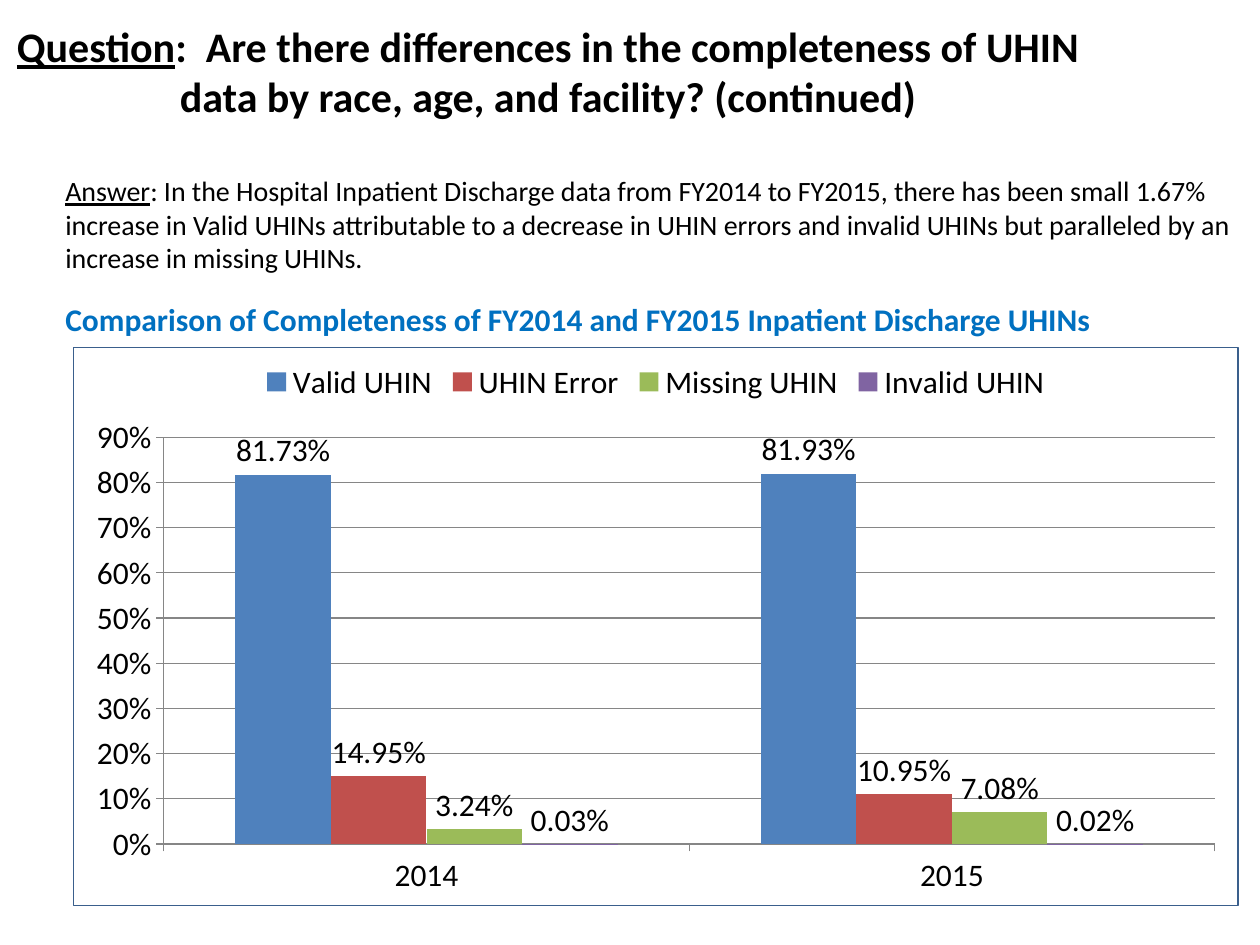
from lxml.etree import fromstring
from pptx import Presentation
from pptx.chart.data import CategoryChartData
from pptx.dml.color import RGBColor
from pptx.enum.chart import XL_CHART_TYPE, XL_LABEL_POSITION, XL_LEGEND_POSITION, XL_TICK_MARK
from pptx.enum.text import MSO_ANCHOR, PP_ALIGN
from pptx.oxml.ns import nsdecls
from pptx.util import Inches, Pt

WIDTH, HEIGHT = 10, 7.5
FONT = "Calibri"
COLORS = {
    "text": "000000", "heading": "0070C0", "grid": "868686", "border": "3A5F8C",
    "Valid UHIN": "4F81BD", "UHIN Error": "C0504D",
    "Missing UHIN": "9BBB59", "Invalid UHIN": "8064A2",
}
YEARS = ["2014", "2015"]
COMPLETENESS = {
    "Valid UHIN": (0.8173, 0.8193),
    "UHIN Error": (0.1495, 0.1095),
    "Missing UHIN": (0.0324, 0.0708),
    "Invalid UHIN": (0.0003, 0.0002),
}


def share(left, top, width, height):
    return (Inches(left * WIDTH), Inches(top * HEIGHT),
            Inches(width * WIDTH), Inches(height * HEIGHT))


def color(key):
    return RGBColor.from_string(COLORS[key])


def add_text(slide, box, text, lead="", size=18, bold=False, ink="text",
             align=PP_ALIGN.LEFT, anchor=MSO_ANCHOR.TOP, wrap=True):
    frame = slide.shapes.add_textbox(*box).text_frame
    frame.word_wrap = wrap
    frame.vertical_anchor = anchor
    paragraph = frame.paragraphs[0]
    paragraph.alignment = align
    for words, underlined in ((lead, True), (text, False)):
        if words:
            run = paragraph.add_run()
            run.text = words
            run.font.name = FONT
            run.font.size = Pt(size)
            run.font.bold = bold
            run.font.underline = underlined
            run.font.color.rgb = color(ink)


def add_question(slide, box):
    add_text(slide, box,
             ":  Are there differences in the completeness of UHIN data by race, "
             "age, and facility? (continued)",
             lead="Question", size=24, bold=True,
             align=PP_ALIGN.CENTER, anchor=MSO_ANCHOR.MIDDLE)


def add_answer(slide, box):
    add_text(slide, box,
             ": In the Hospital Inpatient Discharge data from FY2014 to FY2015, there has "
             "been small 1.67% increase in Valid UHINs attributable to a decrease in UHIN "
             "errors and invalid UHINs but paralleled by an increase in missing UHINs.",
             lead="Answer", size=16)


def add_chart_heading(slide, box):
    add_text(slide, box,
             "Comparison of Completeness of FY2014 and FY2015 Inpatient Discharge UHINs",
             bold=True, ink="heading", wrap=False)


def add_completeness_chart(slide, box):
    data = CategoryChartData(number_format="0.00%")
    data.categories = YEARS
    for name, values in COMPLETENESS.items():
        data.add_series(name, values)
    chart = slide.shapes.add_chart(XL_CHART_TYPE.COLUMN_CLUSTERED, *box, data).chart
    chart.has_title = False
    chart.font.name = FONT
    chart.font.size = Pt(18)
    chart.font.color.rgb = color("text")
    chart.has_legend = True
    chart.legend.position = XL_LEGEND_POSITION.TOP
    chart.legend.include_in_layout = False

    plot = chart.plots[0]
    plot.gap_width = 150
    plot.overlap = 0
    plot.vary_by_categories = False
    for series in plot.series:
        series.format.fill.solid()
        series.format.fill.fore_color.rgb = color(series.name)
        series.invert_if_negative = False
        labels = series.data_labels
        labels.show_value = True
        labels.position = XL_LABEL_POSITION.OUTSIDE_END
        labels.number_format = "0.00%"
        labels.number_format_is_linked = False

    percent = chart.value_axis
    percent.minimum_scale, percent.maximum_scale, percent.major_unit = 0, 0.9, 0.1
    percent.tick_labels.number_format = "0%"
    percent.tick_labels.number_format_is_linked = False
    percent.has_major_gridlines = True
    for axis in (percent, chart.category_axis):
        axis.major_tick_mark = XL_TICK_MARK.OUTSIDE
        axis.minor_tick_mark = XL_TICK_MARK.NONE
    for part in (percent, chart.category_axis, percent.major_gridlines):
        part.format.line.color.rgb = color("grid")
        part.format.line.width = Pt(0.75)
    add_chart_border(chart)


def add_chart_border(chart):
    border = fromstring(
        f'<c:spPr {nsdecls("c", "a")}><a:noFill/><a:ln w="{Pt(0.75)}"><a:solidFill>'
        f'<a:srgbClr val="{COLORS["border"]}"/></a:solidFill></a:ln></c:spPr>')
    chart.element.chart.addnext(border) if hasattr(chart, "element") else \
        chart._chartSpace.chart.addnext(border)


def main():
    deck = Presentation()
    deck.slide_width, deck.slide_height = Inches(WIDTH), Inches(HEIGHT)
    slide = deck.slides.add_slide(deck.slide_layouts[6])
    add_question(slide, share(0, -0.01, 0.87, 0.17))
    add_answer(slide, share(0.042, 0.177, 0.95, 0.121))
    add_completeness_chart(slide, share(0.058, 0.367, 0.925, 0.592))
    add_chart_heading(slide, share(0.042, 0.311, 0.841, 0.053))
    deck.save("out.pptx")


if __name__ == "__main__":
    main()
